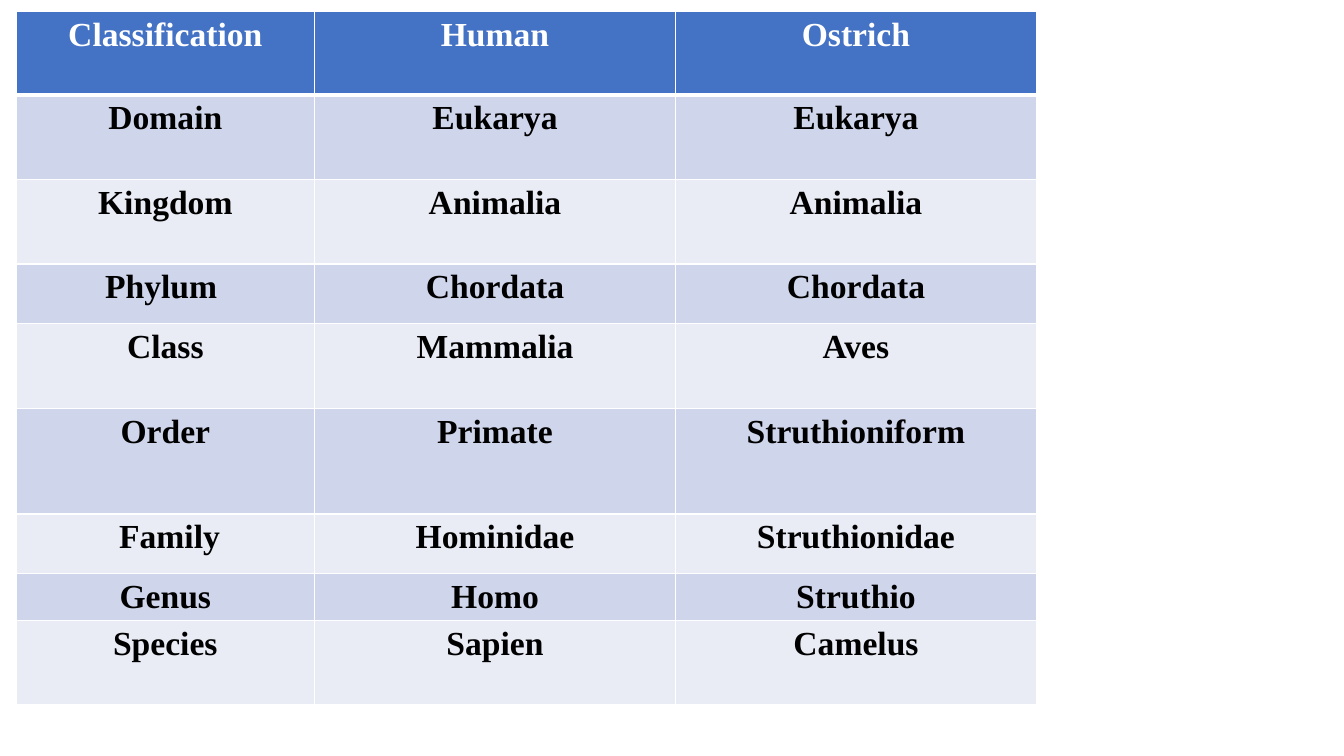
from lxml import etree
from pptx import Presentation
from pptx.dml.color import RGBColor
from pptx.enum.text import PP_ALIGN
from pptx.oxml.ns import qn
from pptx.util import Inches, Pt

WHITE = RGBColor(0xFF, 0xFF, 0xFF)
BLACK = RGBColor(0x00, 0x00, 0x00)
HEADER_BLUE = RGBColor(0x44, 0x72, 0xC4)
BANDS = (RGBColor(0xE9, 0xEB, 0xF5), RGBColor(0xCF, 0xD5, 0xEA))

COLUMN_WIDTHS = (2.96, 3.58, 3.58)
ROWS = (
    (0.83, "Classification", "Human", "Ostrich"),
    (0.84, "Domain", "Eukarya", "Eukarya"),
    (0.84, "Kingdom", "Animalia", "Animalia"),
    (0.59, "Phylum ", "Chordata", "Chordata"),
    (0.84, "Class", "Mammalia", "Aves"),
    (1.05, "Order", "Primate", "Struthioniform"),
    (0.59, " Family", "Hominidae", "Struthionidae"),
    (0.47, "Genus", "Homo", "Struthio"),
    (0.83, "Species", "Sapien", "Camelus"),
)


def set_borders(cell, top, bottom):
    """Draw white cell borders; the top and bottom widths are in points."""
    properties = cell._tc.get_or_add_tcPr()
    widths = {"a:lnL": 1, "a:lnR": 1, "a:lnT": top, "a:lnB": bottom}
    for position, (tag, width) in enumerate(widths.items()):
        line = etree.Element(qn(tag), w=str(Pt(width)))
        fill = etree.SubElement(line, qn("a:solidFill"))
        etree.SubElement(fill, qn("a:srgbClr"), val=str(WHITE))
        properties.insert(position, line)


def fill_cell(cell, text, fill_color, text_color):
    cell.fill.solid()
    cell.fill.fore_color.rgb = fill_color
    para = cell.text_frame.paragraphs[0]
    para.text = text
    para.alignment = PP_ALIGN.CENTER
    font = para.font
    font.name = "Times New Roman"
    font.size = Pt(24)
    font.bold = True
    font.color.rgb = text_color


def add_classification_table(page):
    heights = [row[0] for row in ROWS]
    frame = page.shapes.add_table(
        len(ROWS), len(COLUMN_WIDTHS), Inches(0.16), Inches(0.11),
        Inches(sum(COLUMN_WIDTHS)), Inches(sum(heights)))
    table = frame.table
    for column, width in zip(table.columns, COLUMN_WIDTHS):
        column.width = Inches(width)
    for index, (height, *texts) in enumerate(ROWS):
        table.rows[index].height = Inches(height)
        is_header = index == 0
        fill_color = HEADER_BLUE if is_header else BANDS[index % 2]
        text_color = WHITE if is_header else BLACK
        for cell, text in zip(table.rows[index].cells, texts):
            fill_cell(cell, text, fill_color, text_color)
            set_borders(cell, top=3 if index == 1 else 1,
                        bottom=3 if is_header else 1)


def main():
    deck = Presentation()
    deck.slide_width, deck.slide_height = Inches(13.33), Inches(7.5)
    blank_layout = deck.slide_layouts[6]
    page = deck.slides.add_slide(blank_layout)
    add_classification_table(page)
    deck.save("out.pptx")


if __name__ == "__main__":
    main()
